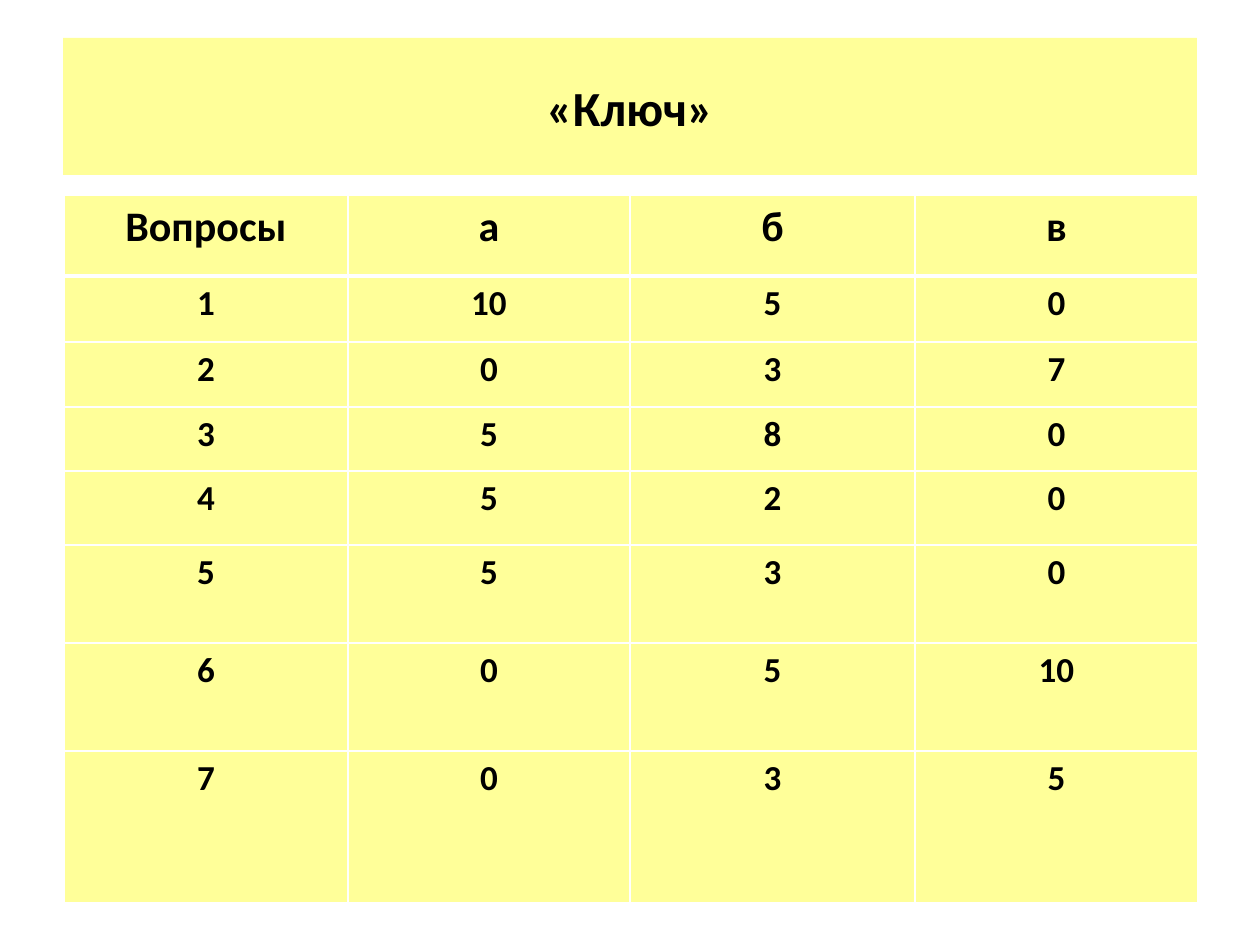
from dataclasses import dataclass

from lxml import etree
from pptx import Presentation
from pptx import util as u
from pptx.dml.color import RGBColor
from pptx.enum import text
from pptx.oxml.ns import qn

SCALE = 914400 / 126  # EMU in one px


@dataclass(frozen=True)
class Theme:
    font: str = "Calibri"
    ink: str = "000000"
    fill: str = "FFFF99"
    rule: str = "FFFFFF"
    title: int = 28
    head: int = 24
    body: int = 20
    thin: int = 1
    thick: int = 3


def px(n):
    return u.Emu(round(n * SCALE))


class Deck:
    def __init__(self, theme, wide, high):
        self.theme = theme
        self.prs = Presentation()
        self.prs.slide_width, self.prs.slide_height = px(wide), px(high)
        self.slide = None

    def page(self):
        self.slide = self.prs.slides.add_slide(self.prs.slide_layouts[5])

    def paint(self, item):
        item.fill.solid()
        item.fill.fore_color.rgb = RGBColor.from_string(self.theme.fill)

    def label(self, frame, words, size):
        para = frame.paragraphs[0]
        para.alignment = text.PP_ALIGN.CENTER
        run = para.add_run()
        run.text = words
        style = {"name": self.theme.font, "size": u.Pt(size), "bold": True}
        for key, value in style.items():
            setattr(run.font, key, value)
        run.font.color.rgb = RGBColor.from_string(self.theme.ink)

    def title(self, words, box):
        shape = self.slide.shapes.title
        for key, value in zip(("left", "top", "width", "height"), box):
            setattr(shape, key, px(value))
        self.paint(shape)
        shape.text_frame.vertical_anchor = text.MSO_ANCHOR.MIDDLE
        self.label(shape.text_frame, words, self.theme.title)

    def border(self, cell, sides):
        props = cell._tc.get_or_add_tcPr()
        for side, width in sides.items():
            line = etree.SubElement(props, qn(f"a:ln{side}"), w=str(u.Pt(width)))
            fill = etree.SubElement(line, qn("a:solidFill"))
            etree.SubElement(fill, qn("a:srgbClr"), val=self.theme.rule)

    def table(self, data, left, top, cols, rows):
        look = self.theme
        grid = self.slide.shapes.add_table(
            len(rows), len(cols), px(left), px(top), px(sum(cols)), px(sum(rows))
        ).table
        for col, width in zip(grid.columns, cols):
            col.width = px(width)
        for r, (row, height) in enumerate(zip(grid.rows, rows)):
            row.height = px(height)
            sides = {
                "L": look.thin,
                "R": look.thin,
                "T": look.thick if r == 1 else look.thin,
                "B": look.thick if r == 0 else look.thin,
            }
            for cell, value in zip(row.cells, data[r]):
                self.border(cell, sides)
                self.paint(cell)
                self.label(cell.text_frame, str(value), look.body if r else look.head)

    def save(self):
        self.prs.save("out.pptx")


def main():
    deck = Deck(Theme(), 1260, 945)
    deck.page()

    # Title band
    deck.title("«Ключ»", (63, 38, 1134, 137))

    # Answer key: points for each option
    points = [
        (10, 5, 0),
        (0, 3, 7),
        (5, 8, 0),
        (5, 2, 0),
        (5, 3, 0),
        (0, 5, 10),
        (0, 3, 5),
    ]
    data = [("Вопросы", "а", "б", "в")]
    data += [(num, *row) for num, row in enumerate(points, 1)]
    deck.table(
        data,
        left=64,
        top=195,
        cols=(284, 282, 285, 283),
        rows=(81, 66, 65, 64, 74, 98, 108, 152),
    )

    deck.save()


if __name__ == "__main__":
    main()
